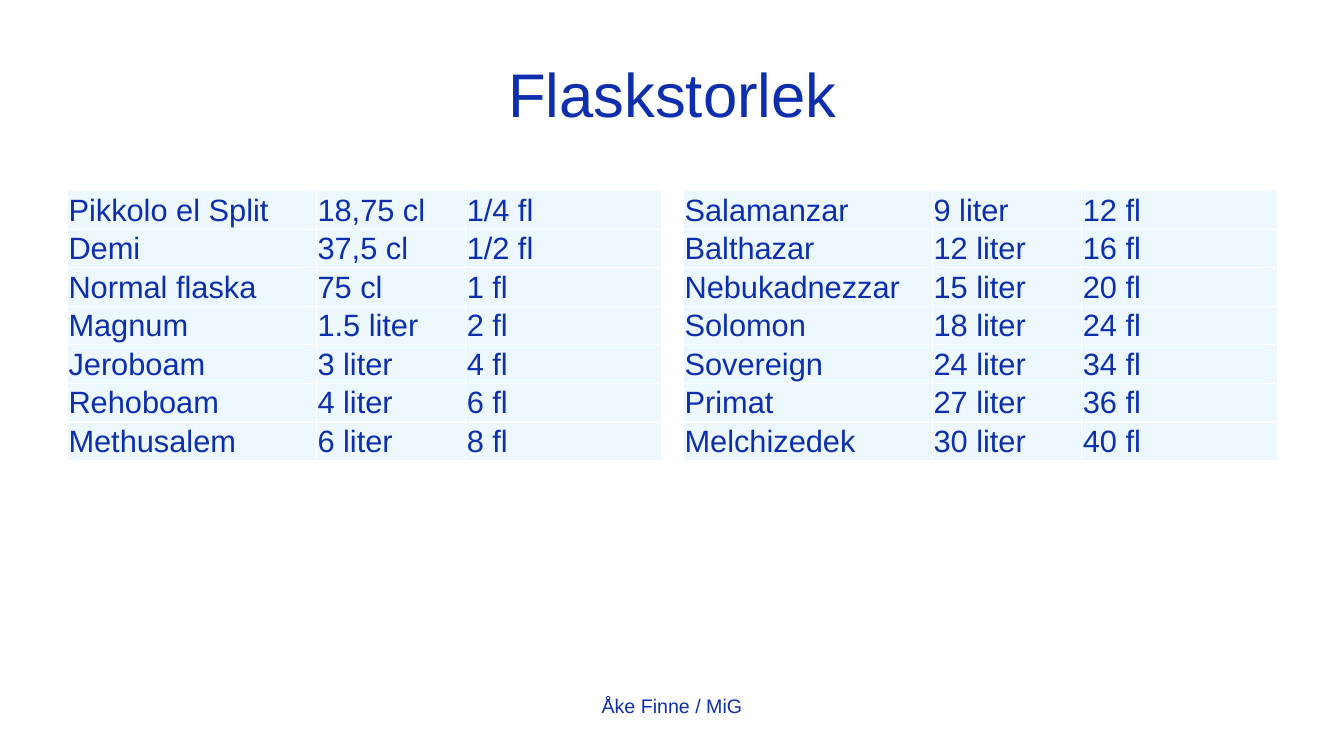
import dataclasses

import lxml.etree
import pptx
import pptx.dml.color
import pptx.enum.text
import pptx.oxml.ns
import pptx.util

Inches = pptx.util.Inches

TITLE = "Flaskstorlek"
FOOTER = "Åke Finne / MiG"
SMALL_BOTTLES = [
    ("Pikkolo el Split", "18,75 cl", "1/4 fl"),
    ("Demi", "37,5 cl", "1/2 fl"),
    ("Normal flaska", "75 cl", "1 fl"),
    ("Magnum", "1.5 liter", "2 fl"),
    ("Jeroboam", "3 liter", "4 fl"),
    ("Rehoboam", "4 liter", "6 fl"),
    ("Methusalem", "6 liter", "8 fl"),
]
LARGE_BOTTLES = [
    ("Salamanzar", "9 liter", "12 fl"),
    ("Balthazar", "12 liter", "16 fl"),
    ("Nebukadnezzar", "15 liter", "20 fl"),
    ("Solomon", "18 liter", "24 fl"),
    ("Sovereign", "24 liter", "34 fl"),
    ("Primat", "27 liter", "36 fl"),
    ("Melchizedek", "30 liter", "40 fl"),
]


@dataclasses.dataclass(frozen=True)
class Theme:
    font: str = "Arial"
    ink: str = "0E2FAD"
    cell: str = "ECF8FE"
    border: str = "FFFFFF"
    title_size: int = 44
    table_size: int = 22
    footer_size: int = 14
    border_width: int = 1


THEME = Theme()
SLIDE_WIDTH, SLIDE_HEIGHT = 13.33, 7.5
MARGIN = 0.67
TABLE_TOP, TABLE_HEIGHT = 1.89, 2.68
COLUMN_WIDTHS = (2.47, 1.48, 1.94)
TABLE_GAP = 0.22
CELL_INSET = 0.01


def format_text(text_frame, size, alignment):
    for paragraph in text_frame.paragraphs:
        paragraph.alignment = alignment
        for run in paragraph.runs:
            run.font.name = THEME.font
            run.font.size = pptx.util.Pt(size)
            run.font.bold = False
            run.font.color.rgb = pptx.dml.color.RGBColor.from_string(THEME.ink)


def add_cell_borders(cell):
    """Line all four sides; call before filling, as the schema puts lines first."""
    qn = pptx.oxml.ns.qn
    properties = cell._tc.get_or_add_tcPr()
    for side in ("lnL", "lnR", "lnT", "lnB"):
        line = lxml.etree.SubElement(properties, qn(f"a:{side}"),
                                     w=str(pptx.util.Pt(THEME.border_width)))
        fill = lxml.etree.SubElement(line, qn("a:solidFill"))
        lxml.etree.SubElement(fill, qn("a:srgbClr"), val=THEME.border)


def format_cell(cell):
    cell.margin_left = cell.margin_right = cell.margin_top = Inches(CELL_INSET)
    cell.margin_bottom = 0
    cell.vertical_anchor = pptx.enum.text.MSO_ANCHOR.MIDDLE
    add_cell_borders(cell)
    cell.fill.solid()
    cell.fill.fore_color.rgb = pptx.dml.color.RGBColor.from_string(THEME.cell)
    format_text(cell.text_frame, THEME.table_size, pptx.enum.text.PP_ALIGN.LEFT)


def add_bottle_table(slide, bottles, left):
    table = slide.shapes.add_table(
        len(bottles), len(COLUMN_WIDTHS), Inches(left), Inches(TABLE_TOP),
        Inches(sum(COLUMN_WIDTHS)), Inches(TABLE_HEIGHT)).table
    table.first_row = table.horz_banding = False
    for column, width in zip(table.columns, COLUMN_WIDTHS):
        column.width = Inches(width)
    for row, bottle in zip(table.rows, bottles):
        for cell, text in zip(row.cells, bottle):
            cell.text_frame.text = text
            format_cell(cell)


def add_title(slide):
    title = slide.shapes.title
    title.left, title.top = Inches(MARGIN), Inches(0.3)
    title.width, title.height = Inches(12), Inches(1.25)
    title.text_frame.text = TITLE
    title.text_frame.vertical_anchor = pptx.enum.text.MSO_ANCHOR.MIDDLE
    format_text(title.text_frame, THEME.title_size, pptx.enum.text.PP_ALIGN.CENTER)


def add_footer(slide):
    width = 4.22
    footer = slide.shapes.add_textbox(Inches((SLIDE_WIDTH - width) / 2), Inches(6.83),
                                      Inches(width), Inches(0.52))
    footer.text_frame.word_wrap = True
    footer.text_frame.text = FOOTER
    format_text(footer.text_frame, THEME.footer_size, pptx.enum.text.PP_ALIGN.CENTER)


def main():
    presentation = pptx.Presentation()
    presentation.slide_width = Inches(SLIDE_WIDTH)
    presentation.slide_height = Inches(SLIDE_HEIGHT)
    title_only_layout = presentation.slide_layouts[5]
    slide = presentation.slides.add_slide(title_only_layout)
    add_title(slide)
    for index, bottles in enumerate((SMALL_BOTTLES, LARGE_BOTTLES)):
        add_bottle_table(slide, bottles,
                         MARGIN + index * (sum(COLUMN_WIDTHS) + TABLE_GAP))
    add_footer(slide)
    presentation.save("out.pptx")


if __name__ == "__main__":
    main()
